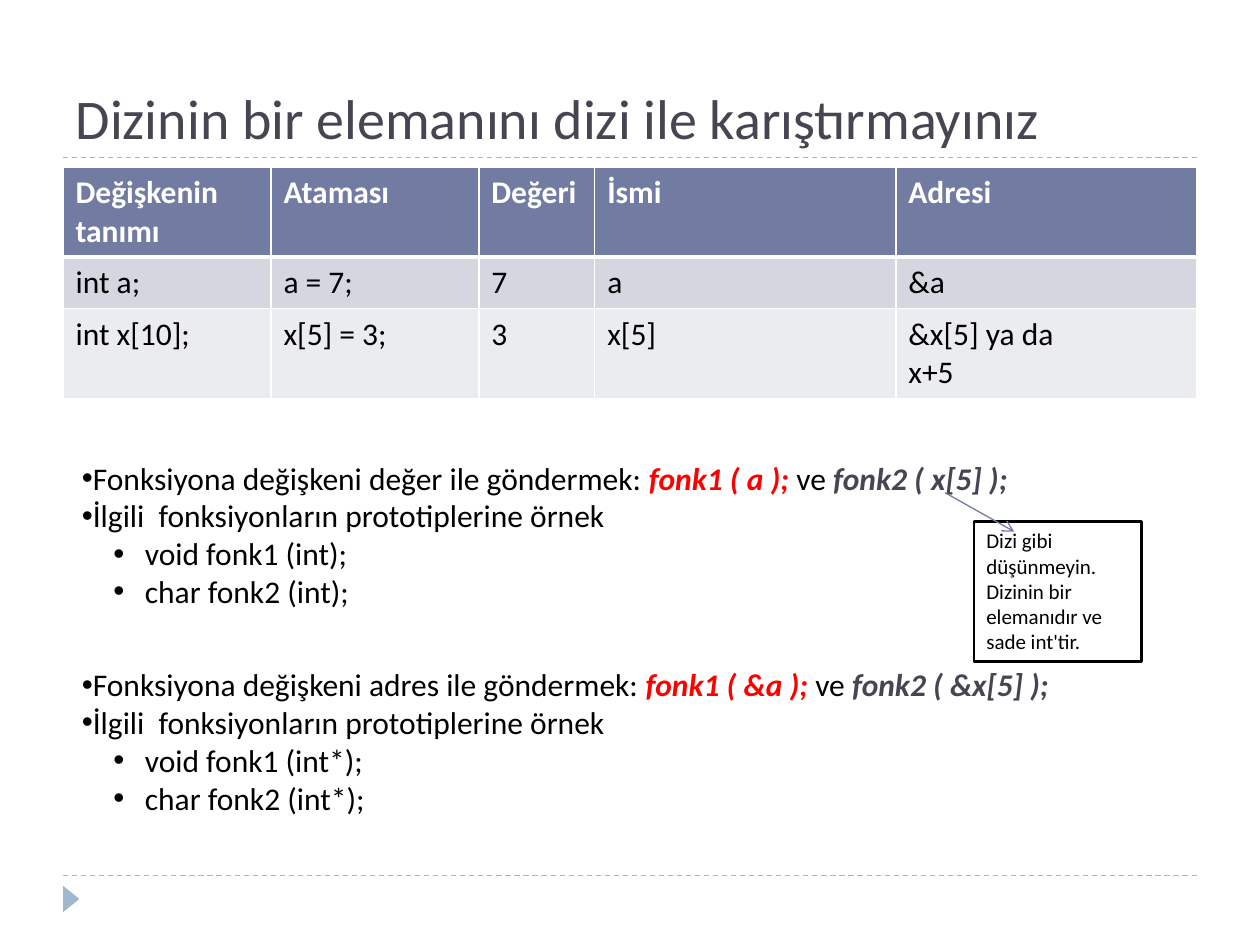
from lxml import etree
from pptx import Presentation
from pptx.dml.color import RGBColor
from pptx.enum.dml import MSO_LINE
from pptx.enum.shapes import MSO_CONNECTOR, MSO_SHAPE
from pptx.enum.text import MSO_ANCHOR, MSO_AUTO_SIZE, PP_ALIGN
from pptx.oxml.ns import qn
from pptx.util import Inches, Pt

TWO_CONTENT = 3
TRIANGLE, RECTANGLE = MSO_SHAPE.ISOSCELES_TRIANGLE, MSO_SHAPE.RECTANGLE
STRAIGHT, DASH = MSO_CONNECTOR.STRAIGHT, MSO_LINE.DASH
LEFT, TOP, BOTTOM = PP_ALIGN.LEFT, MSO_ANCHOR.TOP, MSO_ANCHOR.BOTTOM
FIXED = MSO_AUTO_SIZE.NONE

FONT = "Calibri"
INK, SLATE, RED, WHITE = "000000", "464653", "FF0000", "FFFFFF"
ACCENT, PALE = "727CA3", "9FB8CD"
ROW_FILLS = [ACCENT, "D5D7E0", "EBECF0"]

# The slide is a grid of 40 columns by 30 rows of quarter inches
CELL = Inches(0.25)
MARGIN, CONTENT = 2, 36

VARIABLES = [
    ["Değişkenin tanımı", "Ataması", "Değeri", "İsmi", "Adresi"],
    ["int a;", "a = 7;", "7", "a", "&a"],
    ["int x[10];", "x[5] = 3;", "3", "x[5]", "&x[5] ya da\nx+5"],
]
COLUMN_SPANS = [6.6, 6.6, 3.68, 9.56, 9.56]
ROW_SPANS = [2.8, 1.64, 2.8]


def grid(*cells):
    return [round(cell * CELL) for cell in cells]


def color(hex_code):
    return RGBColor.from_string(hex_code)


def write(paragraph, text, size=18, ink=INK, bold=False, italic=False):
    run = paragraph.add_run()
    run.text = text
    font = run.font
    font.name, font.size = FONT, Pt(size)
    font.bold, font.italic = bold, italic
    font.color.rgb = color(ink)


def place(placeholder, box, anchor):
    placeholder.left, placeholder.top, placeholder.width, placeholder.height = grid(*box)
    frame = placeholder.text_frame
    frame.word_wrap, frame.auto_size, frame.vertical_anchor = True, FIXED, anchor
    return frame


def add_line(slide, start, end, ink, dash=None, arrow=False):
    connector = slide.shapes.add_connector(STRAIGHT, *grid(*start, *end))
    connector.line.color.rgb, connector.line.width = color(ink), Pt(0.75)
    if dash:
        connector.line.dash_style = dash
    if arrow:
        etree.SubElement(connector.line._get_or_add_ln(), qn("a:tailEnd"), type="arrow")
    etree.SubElement(connector._element.spPr, qn("a:effectLst"))


def add_shape(slide, preset, box, fill, outline=None):
    shape = slide.shapes.add_shape(preset, *grid(*box))
    shape.shadow.inherit = False
    shape.fill.solid()
    shape.fill.fore_color.rgb = color(fill)
    if outline:
        shape.line.color.rgb, shape.line.width = color(outline), Pt(1.5)
    else:
        shape.line.fill.background()
    return shape


def add_frame(slide):
    """Dashed rules and the footer marker."""
    for row in (5, 27.8):
        add_line(slide, (MARGIN, row), (MARGIN + CONTENT, row), PALE, dash=DASH)
    add_shape(slide, TRIANGLE, (1.84, 28.28, 0.84, 0.52), PALE).rotation = 90


def add_title(slide, box, text):
    paragraph = place(slide.shapes.title, box, BOTTOM).paragraphs[0]
    paragraph.alignment = LEFT
    write(paragraph, text, size=32, ink=SLATE)


def set_borders(cell, top, bottom):
    properties = cell._tc.get_or_add_tcPr()
    widths = {"a:lnL": 1, "a:lnR": 1, "a:lnT": top, "a:lnB": bottom}
    for position, (side, width) in enumerate(widths.items()):
        border = etree.Element(qn(side), w=str(Pt(width)))
        fill = etree.SubElement(border, qn("a:solidFill"))
        etree.SubElement(fill, qn("a:srgbClr"), val=WHITE)
        properties.insert(position, border)


def add_variable_table(slide, box):
    table = slide.shapes.add_table(len(VARIABLES), len(COLUMN_SPANS), *grid(*box)).table
    for column, width in zip(table.columns, grid(*COLUMN_SPANS)):
        column.width = width
    for row, height in zip(table.rows, grid(*ROW_SPANS)):
        row.height = height
    for r, values in enumerate(VARIABLES):
        header = r == 0
        for c, value in enumerate(values):
            cell = table.cell(r, c)
            cell.fill.solid()
            cell.fill.fore_color.rgb = color(ROW_FILLS[r])
            set_borders(cell, top=3 if r == 1 else 1, bottom=3 if header else 1)
            for i, line in enumerate(value.split("\n")):
                frame = cell.text_frame
                paragraph = frame.add_paragraph() if i else frame.paragraphs[0]
                write(paragraph, line, ink=WHITE if header else INK, bold=header)


def set_bullet(paragraph, margin, hanging):
    properties = paragraph._p.get_or_add_pPr()
    properties.set("marL", str(Inches(margin)))
    properties.set("indent", str(-Inches(hanging)))
    etree.SubElement(properties, qn("a:buFont"), typeface="Arial")
    etree.SubElement(properties, qn("a:buChar"), char="•")


def add_call_list(slide, placeholder, box, method, first, second, parameter):
    """Two bullets on a way of passing, then two prototypes."""
    emphasis = {"bold": True, "italic": True}
    items = [
        (0, [(f"Fonksiyona değişkeni {method} ile göndermek: ", {}),
             (f"fonk1 ( {first} ); ", {"ink": RED, **emphasis}),
             ("ve ", {}),
             (f"fonk2 ( {second} );", {"ink": SLATE, **emphasis})]),
        (0, [("İlgili  fonksiyonların prototiplerine örnek", {})]),
        (1, [(f"void fonk1 ({parameter});", {})]),
        (1, [(f"char fonk2 ({parameter});", {})]),
    ]
    frame = place(placeholder, box, TOP)
    for i, (level, parts) in enumerate(items):
        paragraph = frame.add_paragraph() if i else frame.paragraphs[0]
        paragraph.level = level
        paragraph.space_before = Pt(0)
        set_bullet(paragraph, margin=0.5 * level, hanging=0.25 * level)
        for text, style in parts:
            write(paragraph, text, **style)


def add_note(slide, box, text):
    frame = add_shape(slide, RECTANGLE, box, WHITE, outline=INK).text_frame
    frame.word_wrap, frame.vertical_anchor = True, TOP
    frame.paragraphs[0].alignment = LEFT
    write(frame.paragraphs[0], text, size=12)


def main():
    deck = Presentation()
    deck.slide_width, deck.slide_height = grid(40, 30)
    slide = deck.slides.add_slide(deck.slide_layouts[TWO_CONTENT])
    by_value, by_address = list(slide.placeholders)[1:]

    add_frame(slide)
    add_title(slide, (MARGIN, 0.68, CONTENT, 4.32),
              "Dizinin bir elemanını dizi ile karıştırmayınız")
    add_variable_table(slide, (MARGIN, 5.32, CONTENT, sum(ROW_SPANS)))
    add_call_list(slide, by_value, (2.2, 14.36, 35, 5.24), "değer", "a", "x[5]", "int")
    add_call_list(slide, by_address, (2.2, 20.92, 35, 5.24), "adres", "&a", "&x[5]", "int*")

    # Remark on the array element
    add_note(slide, (30.92, 16.56, 5.32, 4.44),
             "Dizi gibi düşünmeyin. Dizinin bir elemanıdır ve sade int'tir.")
    add_line(slide, (30, 15.64), (32.2, 16.88), ACCENT, arrow=True)
    deck.save("out.pptx")


if __name__ == "__main__":
    main()
